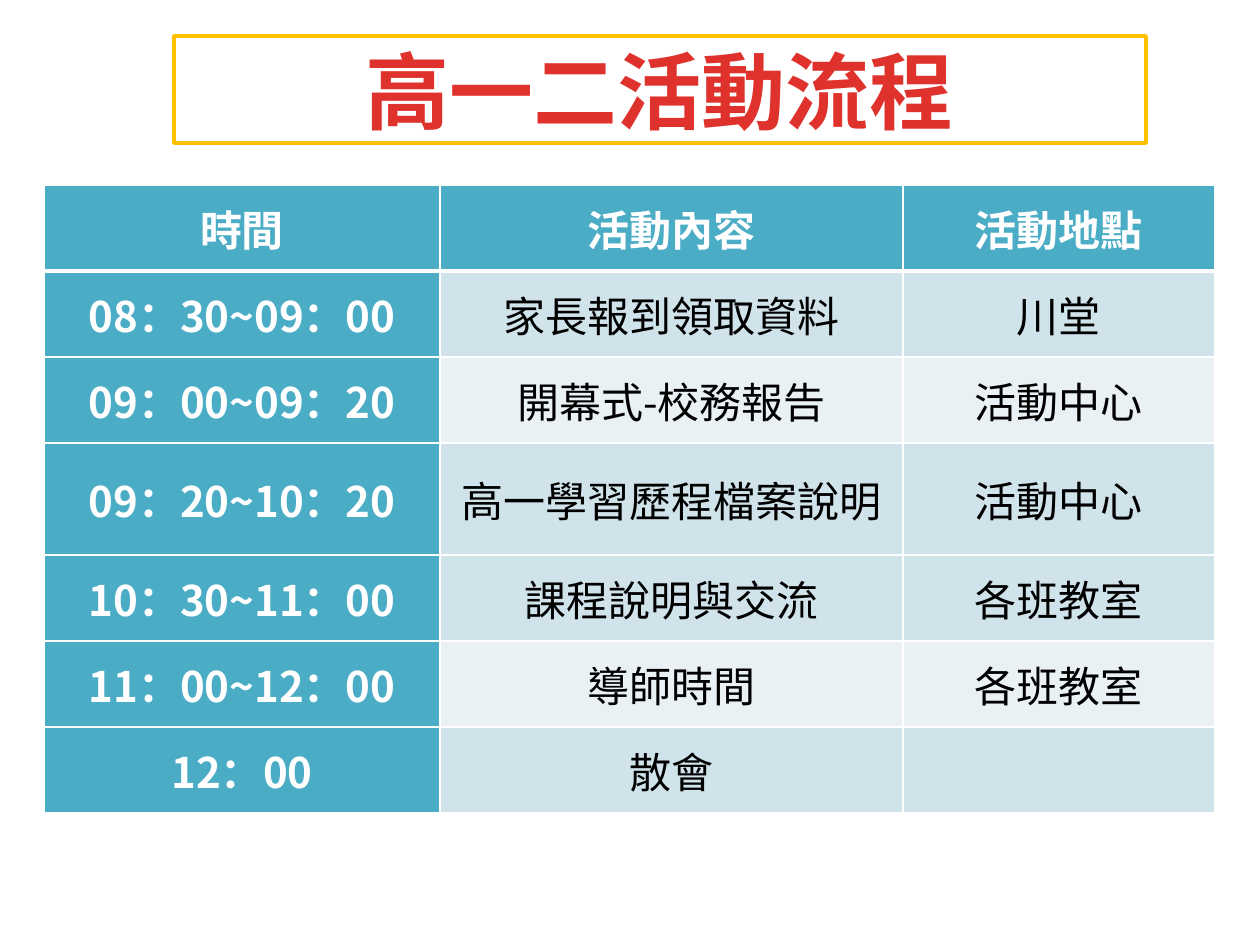
from lxml.etree import SubElement
from pptx import Presentation
from pptx.dml.color import RGBColor
from pptx.enum.text import MSO_ANCHOR, PP_ALIGN
from pptx.oxml import parse_xml
from pptx.oxml.ns import nsdecls, qn
from pptx.util import Pt

PX = 914400 // 126
WHITE, TEAL, BLACK = "FFFFFF", "4BACC6", "000000"
BAND_DARK, BAND_LIGHT = "D0E3EA", "E9F1F5"
CJK_FONT = "Noto Sans CJK SC"

TITLE = "高一二活動流程"
TITLE_BOX = dict(left=174, top=36, width=972, height=107)

# Each row: fill of its body cells, height, texts
SCHEDULE = [
    (TEAL, 86, ("時間", "活動內容", "活動地點")),
    (BAND_DARK, 86, ("08：30~09：00", "家長報到領取資料", "川堂")),
    (BAND_LIGHT, 86, ("09：00~09：20", "開幕式-校務報告", "活動中心")),
    (BAND_DARK, 112, ("09：20~10：20", "高一學習歷程檔案說明", "活動中心")),
    (BAND_DARK, 86, ("10：30~11：00", "課程說明與交流", "各班教室")),
    (BAND_LIGHT, 86, ("11：00~12：00", "導師時間", "各班教室")),
    (BAND_DARK, 86, ("12：00", "散會", "")),
]
COLUMN_WIDTHS = (396, 463, 312)
TABLE_LEFT, TABLE_TOP = 44, 185
CELL_FORMAT = dict(margin_left=9 * PX, margin_right=9 * PX, margin_top=0,
                   margin_bottom=0, vertical_anchor=MSO_ANCHOR.MIDDLE)


def rgb(color):
    return RGBColor.from_string(color)


def paint(fill, color):
    fill.solid()
    fill.fore_color.rgb = rgb(color)


def write(frame, text, color, **font_format):
    paragraph = frame.paragraphs[0]
    paragraph.alignment = PP_ALIGN.CENTER
    run = paragraph.add_run()
    run.text = text
    for attribute, value in font_format.items():
        setattr(run.font, attribute, value)
    run.font.color.rgb = rgb(color)
    properties = run.font._element if hasattr(run.font, "_element") else run._r.get_or_add_rPr()
    properties.set("lang", "zh-TW")
    SubElement(properties, qn("a:ea")).set("typeface", CJK_FONT)


def add_border(cell, side, points):
    cell._tc.get_or_add_tcPr().append(parse_xml(
        f'<a:ln{side} {nsdecls("a")} w="{Pt(points)}"><a:solidFill>'
        f'<a:srgbClr val="{WHITE}"/></a:solidFill></a:ln{side}>'))


def add_title(slide):
    title = slide.shapes.title
    for attribute, value in TITLE_BOX.items():
        setattr(title, attribute, value * PX)
    title._element.spPr.append(parse_xml(
        f'<a:prstGeom {nsdecls("a")} prst="roundRect"><a:avLst/></a:prstGeom>'))
    paint(title.fill, WHITE)
    fill_color = title._element.spPr.find(f'{qn("a:solidFill")}/{qn("a:srgbClr")}')
    SubElement(fill_color, qn("a:alpha")).set("val", "42000")
    title.line.color.rgb = rgb("FFC000")
    title.line.width = Pt(2)
    title.text_frame.vertical_anchor = MSO_ANCHOR.MIDDLE
    write(title.text_frame, TITLE, "DF322D", name="Lato", size=Pt(48), bold=True)


def add_schedule(slide):
    height = sum(row_height for _, row_height, _ in SCHEDULE)
    table = slide.shapes.add_table(
        len(SCHEDULE), len(COLUMN_WIDTHS), TABLE_LEFT * PX, TABLE_TOP * PX,
        sum(COLUMN_WIDTHS) * PX, height * PX).table
    for column, width in zip(table.columns, COLUMN_WIDTHS):
        column.width = width * PX
    for r, (body_fill, row_height, texts) in enumerate(SCHEDULE):
        table.rows[r].height = row_height * PX
        for c, text in enumerate(texts):
            cell = table.cell(r, c)
            is_heading = r == 0 or c == 0
            for attribute, value in CELL_FORMAT.items():
                setattr(cell, attribute, value)
            borders = dict(L=1, R=1, T=3 if r == 1 else 1, B=3 if r == 0 else 1)
            for side, points in borders.items():
                add_border(cell, side, points)
            paint(cell.fill, TEAL if is_heading else body_fill)
            if text:
                write(cell.text_frame, text, WHITE if is_heading else BLACK,
                      name=CJK_FONT, size=Pt(24), bold=is_heading)


def main():
    deck = Presentation()
    deck.slide_width, deck.slide_height = 1260 * PX, 945 * PX
    slide = deck.slides.add_slide(deck.slide_layouts[5])
    add_title(slide)
    add_schedule(slide)
    deck.save("out.pptx")


if __name__ == "__main__":
    main()
